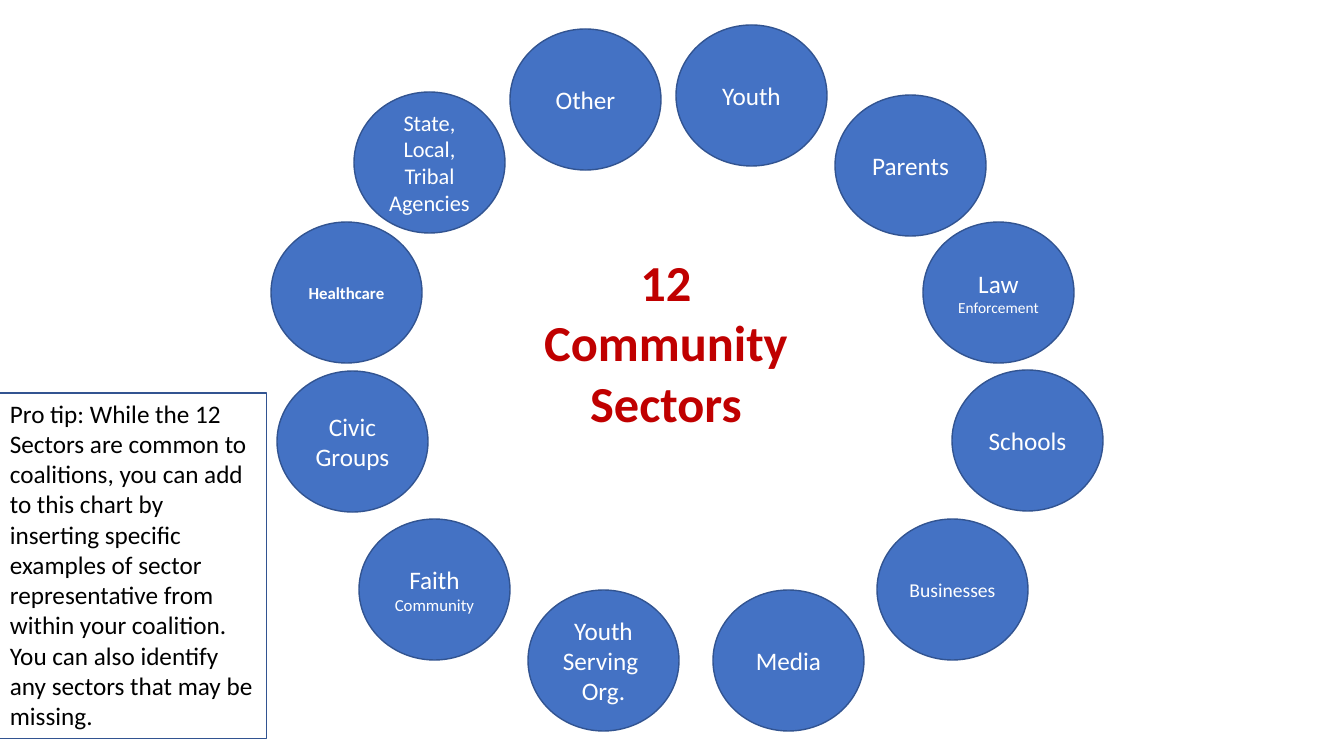
"""Build a slide with a ring of twelve community sectors around a central title."""
from pptx import Presentation
from pptx.dml.color import RGBColor
from pptx.enum.shapes import MSO_SHAPE
from pptx.enum.text import MSO_ANCHOR, MSO_AUTO_SIZE, PP_ALIGN
from pptx.util import Pt

CIRCLE = MSO_SHAPE.FLOWCHART_CONNECTOR
TOP, MIDDLE = MSO_ANCHOR.TOP, MSO_ANCHOR.MIDDLE
LEFT, CENTER = PP_ALIGN.LEFT, PP_ALIGN.CENTER
NO_FIT, GROW = MSO_AUTO_SIZE.NONE, MSO_AUTO_SIZE.SHAPE_TO_FIT_TEXT

BLUE = RGBColor(0x44, 0x72, 0xC4)
DARK_BLUE = RGBColor(0x32, 0x54, 0x91)
RED = RGBColor(0xC0, 0x00, 0x00)
WHITE = RGBColor(0xFF, 0xFF, 0xFF)
BLACK = RGBColor(0x00, 0x00, 0x00)

EMU_PER_PIXEL = 914400 / 100.8
CIRCLE_WIDTH, CIRCLE_HEIGHT = 151, 141


def pixels(*values):
    return [round(value * EMU_PER_PIXEL) for value in values]


def write_text(shape, paragraphs, frame_format, alignment, color, bold=False):
    frame = shape.text_frame
    for name, value in frame_format.items():
        setattr(frame, name, value)
    for index, runs in enumerate(paragraphs):
        paragraph = frame.add_paragraph() if index else frame.paragraphs[0]
        paragraph.alignment = alignment
        paragraph.line_spacing = 1.0
        for text, size in runs:
            run = paragraph.add_run()
            run.text = text
            run.font.color.rgb = color
            font_format = {"name": "Calibri", "size": Pt(size), "bold": bold}
            for name, value in font_format.items():
                setattr(run.font, name, value)


presentation = Presentation()
presentation.slide_width, presentation.slide_height = pixels(1344, 756)
slide = presentation.slides.add_slide(presentation.slide_layouts[5])

title = slide.shapes.title
title.left, title.top, title.width, title.height = pixels(528, 246, 276, 194)
title_frame = {"word_wrap": True, "auto_size": NO_FIT, "vertical_anchor": TOP}
write_text(title, [[("12 Community Sectors", 36)]], title_frame, CENTER, RED, True)

sectors = [
    (676, 25, [[("Youth", 18)]], False),
    (835, 95, [[("Parents", 18)]], False),
    (923, 222, [[("Law ", 18), ("Enforcement", 11)]], False),
    (952, 370, [[("Schools", 18)]], False),
    (877, 519, [[("Businesses", 14)]], False),
    (713, 590, [[("Media", 18)]], False),
    (528, 590, [[("Youth Serving ", 18)], [("Org.", 18)]], False),
    (359, 519, [[("Faith", 18)], [("Community", 12)]], False),
    (277, 371, [[("Civic Groups", 18)]], False),
    (271, 222, [[("Healthcare", 12)]], True),
    (354, 92, [[("State, Local, Tribal Agencies", 16)]], False),
    (510, 29, [[("Other", 18)]], False),
]
circle_frame = {"word_wrap": True, "vertical_anchor": MIDDLE}
for left, top, paragraphs, bold in sectors:
    circle = slide.shapes.add_shape(
        CIRCLE, *pixels(left, top, CIRCLE_WIDTH, CIRCLE_HEIGHT))
    circle.shadow.inherit = False
    circle.fill.solid()
    circle.fill.fore_color.rgb = BLUE
    circle.line.color.rgb = DARK_BLUE
    circle.line.width = Pt(1)
    write_text(circle, paragraphs, circle_frame, CENTER, WHITE, bold)

tip = slide.shapes.add_textbox(*pixels(0, 393, 267, 346))
tip.line.color.rgb = DARK_BLUE
tip.line.width = Pt(0.75)
tip_paragraphs = [
    [("Pro tip: While the 12 ", 18)],
    [("Sectors are common to coalitions, you can add to this chart by "
      "inserting specific examples of sector representative from within "
      "your coalition. You can also identify any sectors that may be "
      "missing.", 18)],
]
tip_frame = {"word_wrap": True, "auto_size": GROW, "vertical_anchor": TOP}
write_text(tip, tip_paragraphs, tip_frame, LEFT, BLACK)

presentation.save("out.pptx")
